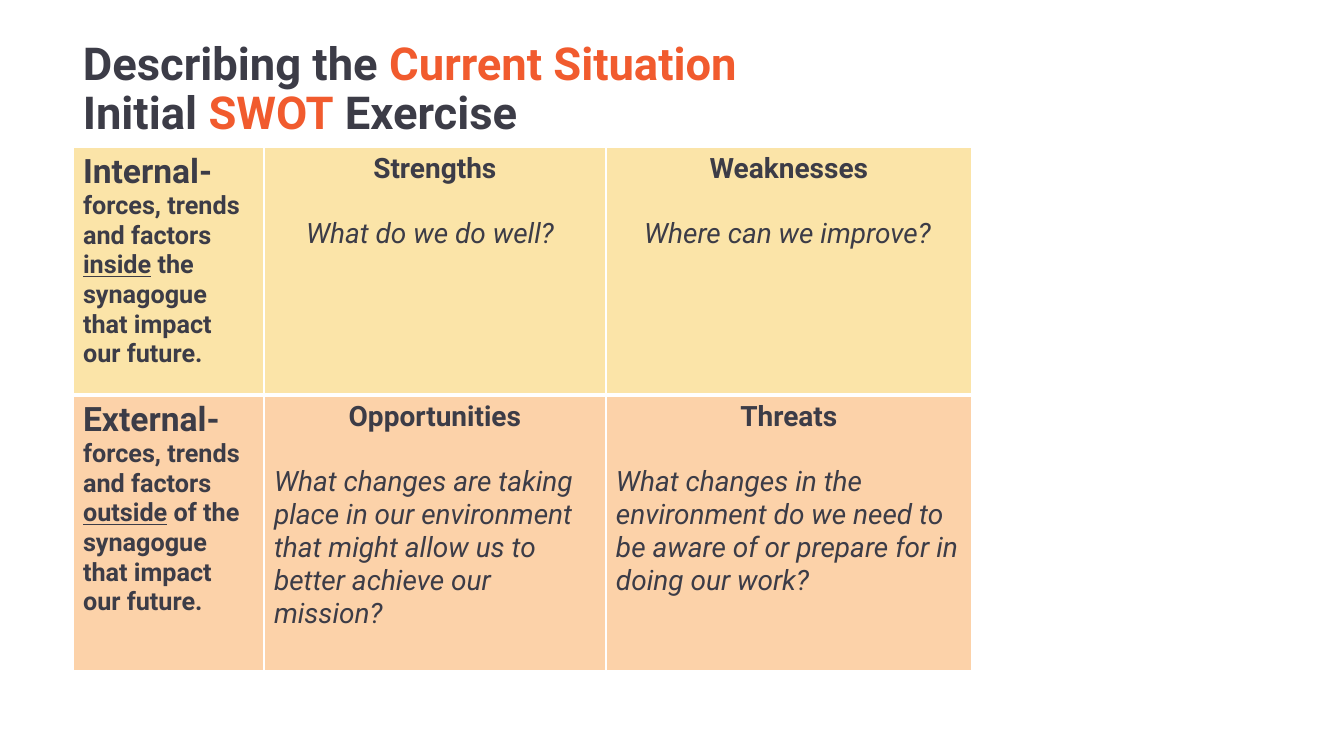
from dataclasses import dataclass

from lxml import etree
from pptx import Presentation
from pptx import util as u
from pptx.dml.color import RGBColor
from pptx.enum import text
from pptx.oxml import ns

EMU_PER_PX = 914400 / 100.8


def px(length):
    return u.Emu(round(length * EMU_PER_PX))


@dataclass(frozen=True)
class Theme:
    font: str = "Roboto"
    ink: str = "3C3C47"
    accent: str = "F15B2E"
    rule: str = "FFFFFF"
    internal: str = "FBE4A8"
    external: str = "FCD2A9"
    title_size: float = 32.4
    scope_size: float = 24
    heading_size: float = 20
    detail_size: float = 18
    question_gap: float = 23.5


class SlideBuilder:
    def __init__(self, deck, theme):
        self.theme = theme
        self.slide = deck.slides.add_slide(deck.slide_layouts[6])

    def style(self, run, size, color=None, bold=True, italic=False, underline=False):
        font = run.font
        font.name, font.size = self.theme.font, u.Pt(size)
        font.bold, font.italic, font.underline = bold, italic, underline
        font.color.rgb = RGBColor.from_string(color or self.theme.ink)

    def add_run(self, paragraph, words, size, **look):
        run = paragraph.add_run()
        run.text = words
        self.style(run, size, **look)

    def title(self, lines, left, top, width, height):
        frame = self.slide.shapes.add_textbox(
            px(left), px(top), px(width), px(height)).text_frame
        frame.word_wrap = True
        frame.vertical_anchor = text.MSO_ANCHOR.MIDDLE
        paragraph = frame.paragraphs[0]
        paragraph.line_spacing = 0.9
        for number, line in enumerate(lines):
            if number:
                paragraph.add_line_break()
            for words, color in line:
                self.add_run(paragraph, words, self.theme.title_size, color=color)

    def table(self, left, top, columns, rows):
        grid = self.slide.shapes.add_table(
            len(rows), len(columns), px(left), px(top),
            px(sum(columns)), px(sum(rows))).table
        grid.first_row = grid.horz_banding = False
        for column, width in zip(grid.columns, columns):
            column.width = px(width)
        for row, height in zip(grid.rows, rows):
            row.height = px(height)
        return grid

    def paint_cell(self, cell, fill, bottom_rule):
        properties = cell._tc.get_or_add_tcPr()
        for side, points in (("L", 1), ("R", 1), ("T", 1), ("B", bottom_rule)):
            line = etree.SubElement(properties, ns.qn(f"a:ln{side}"), w=str(u.Pt(points)))
            solid = etree.SubElement(line, ns.qn("a:solidFill"))
            etree.SubElement(solid, ns.qn("a:srgbClr"), val=self.theme.rule)
        cell.fill.solid()
        cell.fill.fore_color.rgb = RGBColor.from_string(fill)

    def scope_cell(self, cell, scope, place, ending):
        paragraph = cell.text_frame.paragraphs[0]
        detail = self.theme.detail_size
        self.add_run(paragraph, scope, self.theme.scope_size)
        self.add_run(paragraph, " forces, trends and factors ", detail)
        self.add_run(paragraph, place, detail, underline=True)
        self.add_run(paragraph, ending, detail)

    def question_cell(self, cell, heading, question, indent):
        frame = cell.text_frame
        frame.text = f"{heading}\n{question}"
        head, body = frame.paragraphs
        head.alignment = text.PP_ALIGN.CENTER
        self.style(head.runs[0], self.theme.heading_size)
        body.space_before = u.Pt(self.theme.question_gap)
        body._p.get_or_add_pPr().set("marL", str(px(indent)))
        self.style(body.runs[0], self.theme.heading_size, bold=False, italic=True)


def main():
    deck = Presentation()
    deck.slide_width, deck.slide_height = px(1344), px(756)
    theme = Theme()
    builder = SlideBuilder(deck, theme)

    # Title
    builder.title(
        [[("Describing the ", theme.ink), ("Current Situation", theme.accent)],
         [("Initial ", theme.ink), ("SWOT", theme.accent), (" Exercise", theme.ink)]],
        73, 32, 828, 117)

    # SWOT content: fill, bottom rule, scope, then (heading, question, indent)
    swot_rows = [
        (theme.internal, 3,
         ("Internal-", "inside", " the synagogue that impact our future."),
         [("Strengths", "What do we do well?", 32),
          ("Weaknesses", "Where can we improve?", 28)]),
        (theme.external, 1,
         ("External-", "outside", " of the synagogue that impact our future."),
         [("Opportunities", "What changes are taking place in our environment "
           "that might allow us to better achieve our mission?", 0),
          ("Threats", "What changes in the environment do we need to be aware of "
           "or prepare for in doing our work?", 0)]),
    ]

    # SWOT table
    swot = builder.table(73, 147, columns=[191, 342, 366], rows=[248, 276])
    for row, (fill, bottom_rule, scope, questions) in zip(swot.rows, swot_rows):
        scope_cell, *question_cells = row.cells
        builder.scope_cell(scope_cell, *scope)
        for cell, question in zip(question_cells, questions):
            builder.question_cell(cell, *question)
        for cell in row.cells:
            builder.paint_cell(cell, fill, bottom_rule)

    deck.save("out.pptx")


if __name__ == "__main__":
    main()
